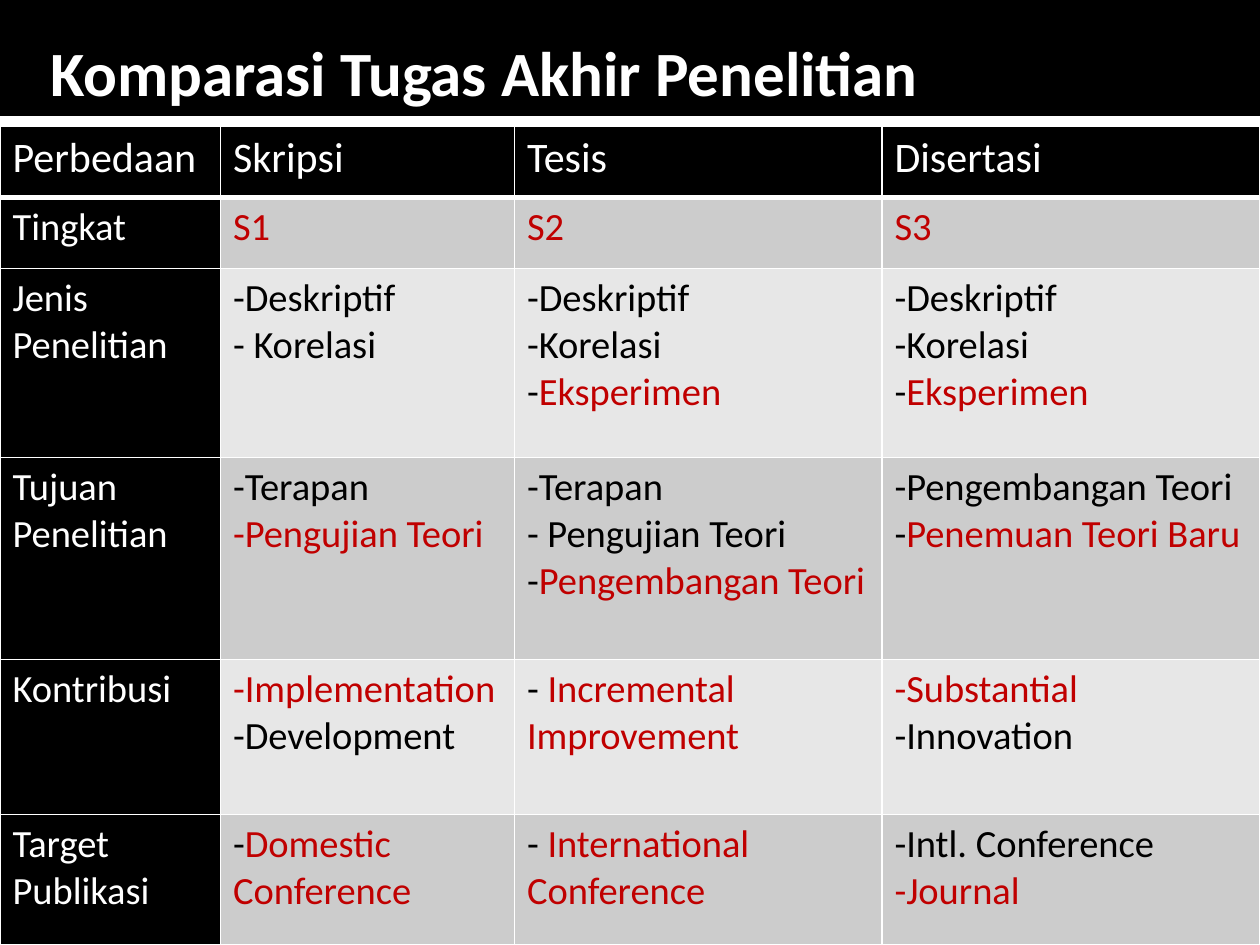
from lxml.etree import SubElement
from pptx import Presentation
from pptx.dml.color import RGBColor
from pptx.enum.shapes import MSO_SHAPE as SHAPE
from pptx.enum.text import MSO_ANCHOR as ANCHOR, PP_ALIGN as ALIGN
from pptx.oxml.ns import qn
from pptx.util import Pt

BLACK = RGBColor(0x00, 0x00, 0x00)
WHITE = RGBColor(0xFF, 0xFF, 0xFF)
RED = RGBColor(0xC0, 0x00, 0x00)
DARK_BAND = RGBColor(0xCC, 0xCC, 0xCC)
LIGHT_BAND = RGBColor(0xE7, 0xE7, 0xE7)

FONT = "Calibri"
BULLET = "•"
ACCENT = "*"
COLUMNS = [126, 168, 210, 216]
HEIGHTS = [41, 40.5, 108, 115.5, 88.5, 74.5]
ROWS = [
    ["Perbedaan", "Skripsi", "Tesis", "Disertasi"],
    ["Tingkat", "*S1", "*S2", "*S3"],
    ["Jenis Penelitian",
     "-Deskriptif\n- Korelasi",
     "-Deskriptif\n-Korelasi\n-*Eksperimen",
     "-Deskriptif\n-Korelasi\n-*Eksperimen"],
    ["Tujuan Penelitian",
     "•Terapan\n•*Pengujian Teori",
     "-Terapan\n- Pengujian Teori\n-*Pengembangan Teori",
     "-Pengembangan Teori\n-*Penemuan Teori Baru"],
    ["Kontribusi",
     "•*Implementation\n•Development",
     "- *Incremental Improvement",
     "•*Substantial\n•Innovation"],
    ["Target Publikasi",
     "-*Domestic Conference",
     "- *International Conference",
     "•Intl. Conference\n•*Journal"],
]


def write(tf, text, size=22, color=BLACK, bold=False):
    """Write lines; a leading • makes a dash bullet and * starts red text."""
    tf.word_wrap = True
    for i, line in enumerate(text.split("\n")):
        p = tf.paragraphs[0] if i == 0 else tf.add_paragraph()
        p.alignment = ALIGN.LEFT
        if line.startswith(BULLET):
            pPr = p._p.get_or_add_pPr()
            pPr.set("marL", "0")
            pPr.set("indent", "0")
            SubElement(pPr, qn("a:buFont"), typeface=FONT)
            SubElement(pPr, qn("a:buChar"), char="-")
            line = line[1:]
        for part, ink in zip(line.split(ACCENT), (color, RED)):
            if part:
                r = p.add_run()
                r.text = part
                r.font.name = FONT
                r.font.size = Pt(size)
                r.font.bold = bold
                r.font.color.rgb = ink


def set_borders(cell, top, bottom):
    """Draw white cell borders with the given top and bottom widths."""
    tcPr = cell._tc.get_or_add_tcPr()
    for side, width in (("L", 1), ("R", 1), ("T", top), ("B", bottom)):
        ln = SubElement(tcPr, qn(f"a:ln{side}"), w=str(Pt(width)))
        fill = SubElement(ln, qn("a:solidFill"))
        SubElement(fill, qn("a:srgbClr"), val=str(WHITE))


def add_title_bar(s, x, y, w, h):
    """Add the black bar and the slide title."""
    bar = s.shapes.add_shape(SHAPE.RECTANGLE, Pt(x), Pt(y), Pt(w), Pt(h))
    bar.shadow.inherit = False
    bar.fill.solid()
    bar.fill.fore_color.rgb = BLACK
    bar.line.color.rgb = BLACK
    bar.line.width = Pt(1)
    sp = s.shapes.add_textbox(Pt(x + 21.6), Pt(y + 15), Pt(w - 46), Pt(h - 15))
    sp.text_frame.vertical_anchor = ANCHOR.BOTTOM
    write(sp.text_frame, "Komparasi Tugas Akhir Penelitian",
          size=36, color=WHITE, bold=True)


def add_comparison(s, x, y, w, h):
    """Add the comparison table with dark headings and banded rows."""
    table = s.shapes.add_table(
        len(ROWS), len(COLUMNS), Pt(x), Pt(y), Pt(w), Pt(h)).table
    for column, share in zip(table.columns, COLUMNS):
        column.width = Pt(w * share / sum(COLUMNS))
    for row, share in zip(table.rows, HEIGHTS):
        row.height = Pt(h * share / sum(HEIGHTS))
    for i, texts in enumerate(ROWS):
        band = DARK_BAND if i % 2 else LIGHT_BAND
        for j, text in enumerate(texts):
            cell = table.cell(i, j)
            heading = i == 0 or j == 0
            set_borders(cell, top=3 if i == 1 else 1, bottom=3 if i == 0 else 1)
            cell.fill.solid()
            cell.fill.fore_color.rgb = BLACK if heading else band
            write(cell.text_frame, text, size=24 if i == 0 else 22,
                  color=WHITE if heading else BLACK)


def main():
    """Build and save the slide."""
    prs = Presentation()
    prs.slide_width, prs.slide_height = Pt(720), Pt(540)
    s = prs.slides.add_slide(prs.slide_layouts[6])
    add_title_bar(s, 0, 0, 720, 66)
    add_comparison(s, 0, 72, 720, 468)
    prs.save("out.pptx")


if __name__ == "__main__":
    main()
